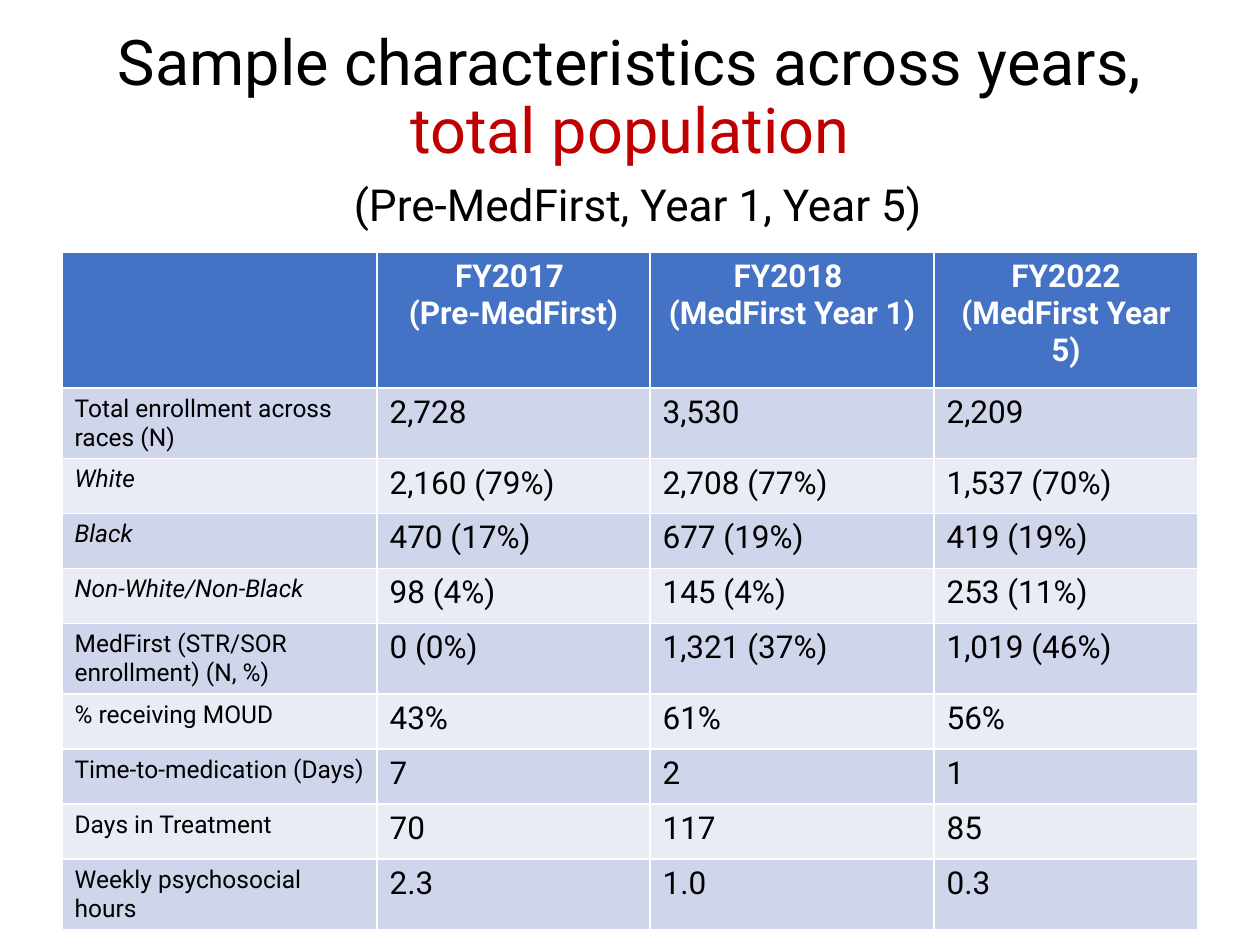
from pptx import Presentation
from pptx.dml.color import RGBColor
from pptx.enum.text import MSO_ANCHOR as Anchor, MSO_AUTO_SIZE as AutoSize, PP_ALIGN as Align
from pptx.util import Emu, Pt

SCALE = 914400 / 126  # EMU in one px
FONT = "Roboto"
COLORS = {
    "text": "000000", "accent": "C00000", "header": "4472C4",
    "header_text": "FFFFFF", "odd": "CFD5EA", "even": "E9EBF5",
}
HEADERS = [
    [],
    ["FY2017 ", "(Pre-MedFirst)"],
    ["FY2018 ", "(MedFirst Year 1)"],
    ["FY2022", "(MedFirst Year 5)"],
]
ROWS = [
    ("Total enrollment across races (N)", "2,728", "3,530", "2,209"),
    ("White", "2,160 (79%)", "2,708 (77%)", "1,537 (70%)"),
    ("Black", "470 (17%)", "677 (19%)", "419 (19%)"),
    ("Non-White/Non-Black", "98 (4%)", "145 (4%)", "253 (11%)"),
    ("MedFirst (STR/SOR enrollment) (N, %)", "0 (0%)", "1,321 (37%)", "1,019 (46%)"),
    ("% receiving MOUD", "43%", "61%", "56%"),
    ("Time-to-medication (Days)", "7", "2", "1"),
    ("Days in Treatment", "70", "117", "85"),
    ("Weekly psychosocial hours", "2.3", "1.0", "0.3"),
]
RACES = {"White", "Black", "Non-White/Non-Black"}
COLUMN_WIDTHS = [315, 273, 284, 264]
ROW_HEIGHTS = [136, 68, 55, 55, 55, 68, 55, 55, 55, 55]


def px(length):
    return Emu(round(length * SCALE))


def rgb(name):
    return RGBColor.from_string(COLORS[name])


def add_span(para, text, size=18, color="text", bold=False, italic=False):
    span = para.add_run()
    span.text = text
    font = span.font
    font.name, font.size, font.bold, font.italic = FONT, Pt(size), bold, italic
    font.color.rgb = rgb(color)


class Page:
    def __init__(self, deck):
        self.slide = deck.slides.add_slide(deck.slide_layouts.get_by_name("Title Only"))

    def title(self, left, top, width, height):
        box = self.slide.shapes.title
        box.left, box.top, box.width, box.height = map(px, (left, top, width, height))
        frame = box.text_frame
        frame.word_wrap = True
        frame.auto_size = AutoSize.NONE
        frame.vertical_anchor = Anchor.MIDDLE
        para = frame.paragraphs[0]
        para.alignment = Align.CENTER
        para.line_spacing = 0.9
        add_span(para, "Sample characteristics across years, ", size=36)
        add_span(para, "total population", size=36, color="accent")
        para.add_line_break()
        add_span(para, " ", size=36, color="accent")
        add_span(para, "(Pre-MedFirst, Year 1, Year 5)", size=25.2)

    def cell(self, cell, lines, fill, align=Align.LEFT, **style):
        cell.fill.solid()
        cell.fill.fore_color.rgb = rgb(fill)
        frame = cell.text_frame
        for index, line in enumerate(lines):
            para = frame.add_paragraph() if index else frame.paragraphs[0]
            para.alignment = align
            add_span(para, line, **style)

    def table(self, left, top):
        """Header row, then a small label and three values in each banded row."""
        table = self.slide.shapes.add_table(
            len(ROW_HEIGHTS), len(COLUMN_WIDTHS), px(left), px(top),
            px(sum(COLUMN_WIDTHS)), px(sum(ROW_HEIGHTS))).table
        for column, width in zip(table.columns, COLUMN_WIDTHS):
            column.width = px(width)
        for row, height in zip(table.rows, ROW_HEIGHTS):
            row.height = px(height)
        for column, lines in enumerate(HEADERS):
            self.cell(table.cell(0, column), lines, "header", Align.CENTER,
                      color="header_text", bold=True)
        for row, (label, *values) in enumerate(ROWS, start=1):
            fill = "odd" if row % 2 else "even"
            self.cell(table.cell(row, 0), [label], fill, size=14, italic=label in RACES)
            for column, value in enumerate(values, start=1):
                self.cell(table.cell(row, column), [value], fill)


def main():
    deck = Presentation()
    deck.slide_width, deck.slide_height = px(1260), px(945)
    page = Page(deck)
    page.title(87, 42, 1086, 183)
    page.table(62, 252)
    deck.save("out.pptx")


if __name__ == "__main__":
    main()
